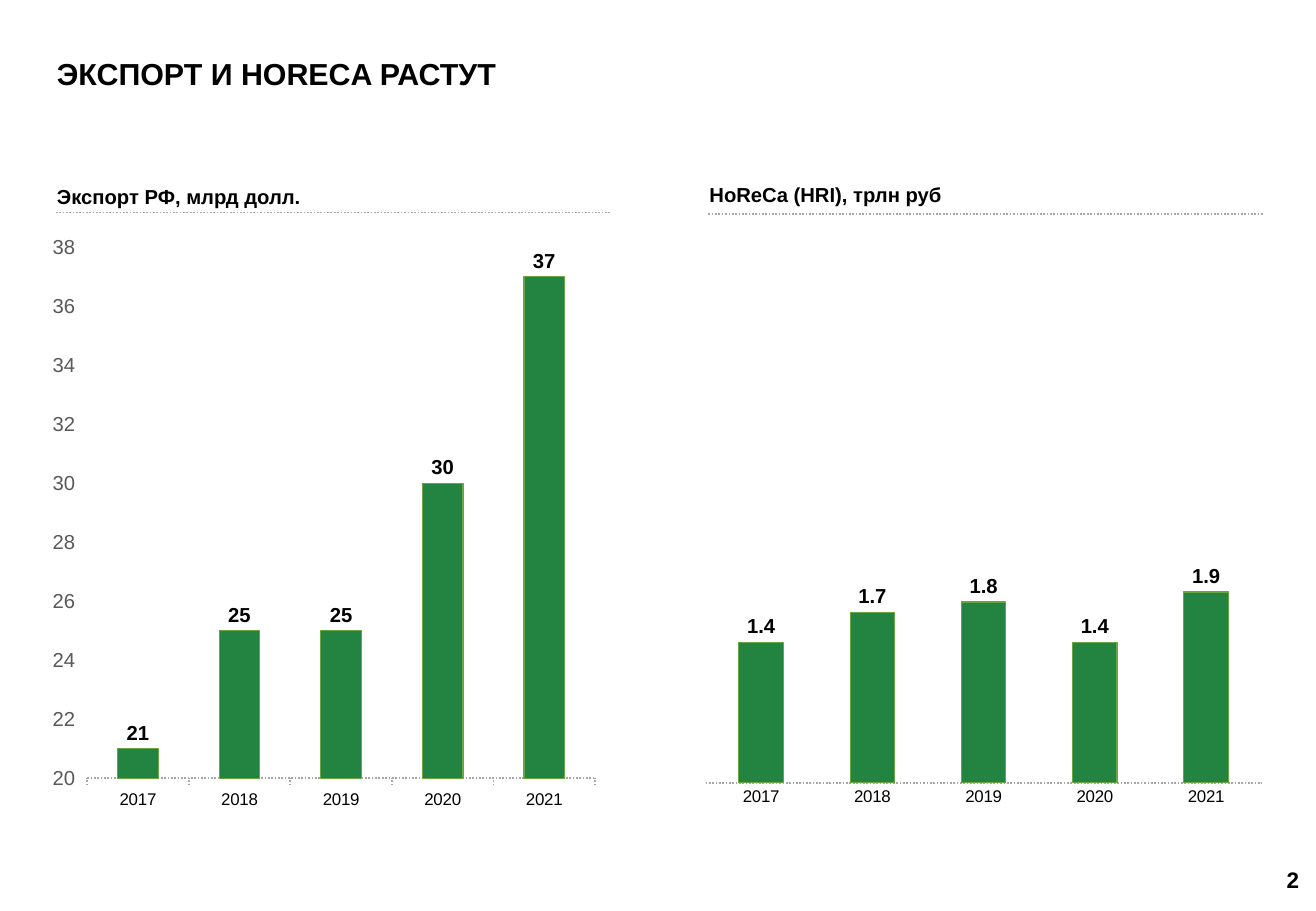
import pptx
import pptx.chart.data
import pptx.dml.color
import pptx.enum.chart
import pptx.enum.dml
import pptx.enum.shapes
import pptx.enum.text
import pptx.util
import lxml.etree
from pptx.util import Inches

COLORS = {"text": "000000", "scale": "595959", "rule": "A6A6A6",
          "bar": "238340", "bar_edge": "69A643"}
YEARS = ["2017", "2018", "2019", "2020", "2021"]
DRAWING = "http://schemas.openxmlformats.org/drawingml/2006/main"
CHART = "http://schemas.openxmlformats.org/drawingml/2006/chart"


class SlideBuilder:
    """Holds the style and the current slide, and adds its elements."""

    def __init__(self, slide, font="Arial"):
        self.slide = slide
        self.font = font

    def color(self, name):
        return pptx.dml.color.RGBColor.from_string(COLORS[name])

    def style_font(self, font, size, color="text", bold=False):
        font.name = self.font
        font.size = pptx.util.Pt(size)
        font.bold = bold
        font.color.rgb = self.color(color)

    def style_rule(self, line):
        line.color.rgb = self.color("rule")
        line.width = pptx.util.Pt(1)
        line.dash_style = pptx.enum.dml.MSO_LINE.ROUND_DOT

    def text(self, words, left, top, width, height, size, anchor="TOP", align="LEFT", spacing=1.0):
        frame = self.slide.shapes.add_textbox(
            Inches(left), Inches(top), Inches(width), Inches(height)).text_frame
        frame.word_wrap = True
        frame.vertical_anchor = pptx.enum.text.MSO_ANCHOR[anchor]
        paragraph = frame.paragraphs[0]
        paragraph.alignment = pptx.enum.text.PP_ALIGN[align]
        paragraph.line_spacing = spacing
        run = paragraph.add_run()
        run.text = words
        self.style_font(run.font, size, bold=True)

    def rule(self, left, top, width):
        rule = self.slide.shapes.add_connector(
            pptx.enum.shapes.MSO_CONNECTOR.STRAIGHT,
            Inches(left), Inches(top), Inches(left + width), Inches(top))
        self.style_rule(rule.line)
        lxml.etree.SubElement(rule._element.spPr, f"{{{DRAWING}}}effectLst")

    def heading(self, words, left, top, rule_top):
        self.text(words, left, top, 4.5, 0.3, 12)
        self.rule(left + 0.09, rule_top, 4.57)

    def column_chart(self, values, left, top, width, height, number_format,
                     minimum, maximum, step, show_scale):
        data = pptx.chart.data.CategoryChartData(number_format=number_format)
        data.categories = YEARS
        data.add_series("Series 1", values)
        chart = self.slide.shapes.add_chart(
            pptx.enum.chart.XL_CHART_TYPE.COLUMN_CLUSTERED,
            Inches(left), Inches(top), Inches(width), Inches(height), data).chart
        chart.has_legend = False
        chart.has_title = False
        self.style_font(chart.font, 10)

        ticks = pptx.enum.chart.XL_TICK_MARK
        years = chart.category_axis
        years.has_major_gridlines = False
        years.major_tick_mark = ticks.OUTSIDE if show_scale else ticks.NONE
        years.minor_tick_mark = ticks.NONE
        self.style_font(years.tick_labels.font, 10)
        self.style_rule(years.format.line)

        scale = chart.value_axis
        scale.visible = show_scale
        scale.has_major_gridlines = False
        scale.minimum_scale, scale.maximum_scale = minimum, maximum
        scale.major_unit = step
        scale.major_tick_mark = ticks.OUTSIDE
        scale.minor_tick_mark = ticks.NONE
        scale.format.line.fill.background()
        scale.tick_labels.number_format = number_format
        scale.tick_labels.number_format_is_linked = False
        self.style_font(scale.tick_labels.font, 12, "scale")

        plot = chart.plots[0]
        plot.gap_width = 150
        plot.vary_by_categories = False
        bars = plot.series[0]
        bars.format.fill.solid()
        bars.format.fill.fore_color.rgb = self.color("bar")
        bars.format.line.color.rgb = self.color("bar_edge")
        bars.format.line.width = pptx.util.Pt(0.75)
        labels = bars.data_labels
        labels.show_value = True
        labels.position = pptx.enum.chart.XL_LABEL_POSITION.OUTSIDE_END
        labels.number_format = number_format
        labels.number_format_is_linked = False
        self.style_font(labels.font, 12, bold=True)
        return chart

    def place_plot(self, chart, x, y, w, h):
        area = chart._chartSpace.chart.plotArea
        for old in area.findall(f"{{{CHART}}}layout"):
            area.remove(old)
        layout = lxml.etree.Element(f"{{{CHART}}}layout")
        area.insert(0, layout)
        manual = lxml.etree.SubElement(layout, f"{{{CHART}}}manualLayout")
        settings = {"layoutTarget": "inner", "xMode": "edge", "yMode": "edge",
                    "x": x, "y": y, "w": w, "h": h}
        for tag, value in settings.items():
            lxml.etree.SubElement(manual, f"{{{CHART}}}{tag}").set("val", str(value))


def main():
    deck = pptx.Presentation()
    deck.slide_width, deck.slide_height = Inches(10.83), Inches(7.5)
    builder = SlideBuilder(deck.slides.add_slide(deck.slide_layouts[6]))

    builder.text("ЭКСПОРТ И HORECA РАСТУТ", 0.37, 0.26, 10.1, 0.55, 18, anchor="BOTTOM", spacing=0.9)
    builder.text("2", 9.96, 7.04, 0.83, 0.4, 13.3, anchor="MIDDLE", align="RIGHT")

    horeca = builder.column_chart([1.4, 1.7, 1.8, 1.4, 1.9], 5.66, 1.87, 4.87, 4.92,
                                  "0.0", 0, 5, 1, show_scale=False)
    builder.place_plot(horeca, 0.03, 0.09, 0.94, 0.84)
    builder.column_chart([21, 25, 25, 30, 37], 0.34, 1.85, 4.65, 4.91,
                         "#,##0", 20, 38, 2, show_scale=True)

    builder.heading("HoReCa (HRI), трлн руб", 5.74, 1.45, 1.76)
    builder.heading("Экспорт РФ, млрд долл.", 0.37, 1.47, 1.75)

    deck.save("out.pptx")


if __name__ == "__main__":
    main()
